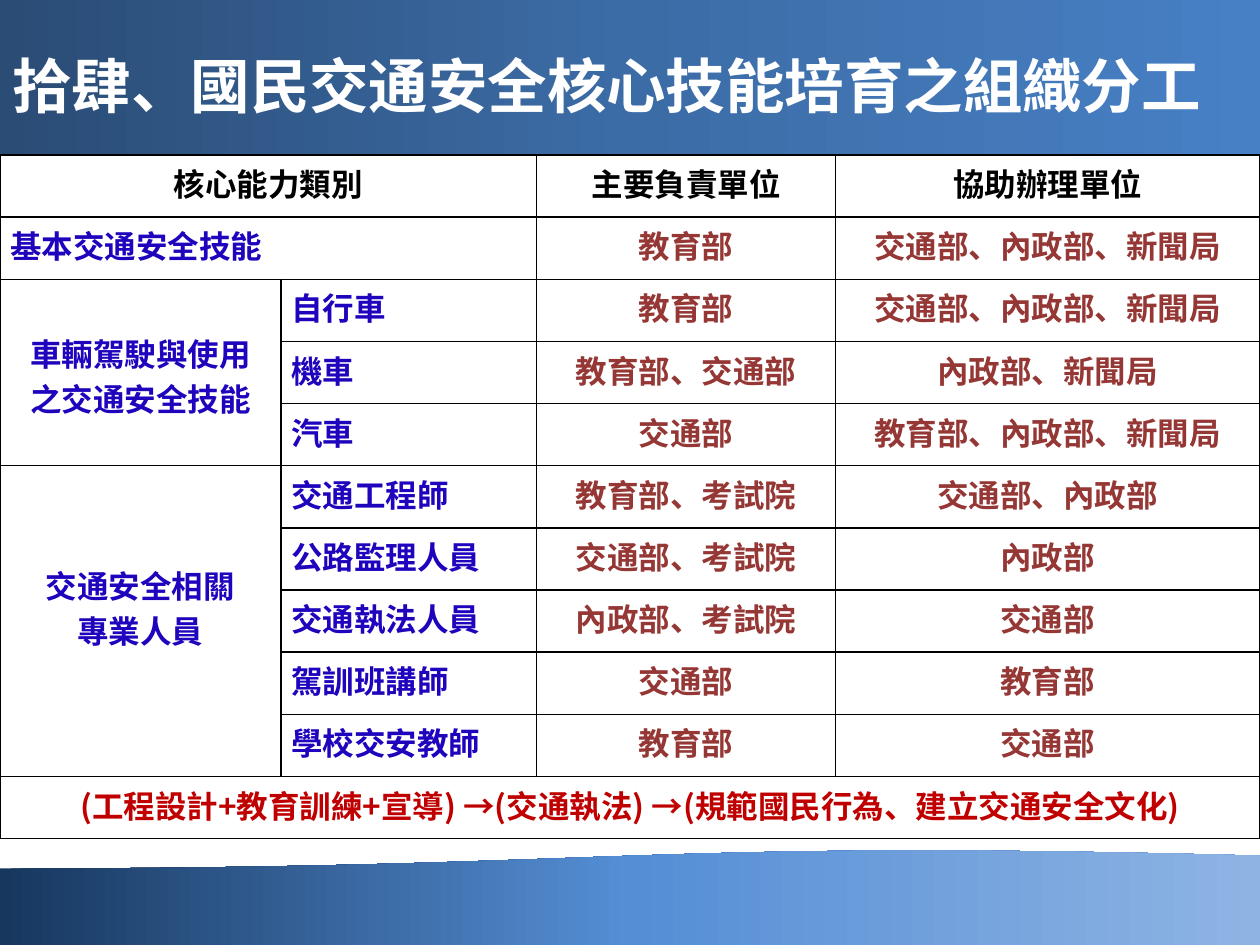
from dataclasses import dataclass

from lxml import etree
from pptx import Presentation
from pptx.dml.color import RGBColor
from pptx.enum.shapes import MSO_SHAPE
from pptx.enum.text import MSO_ANCHOR, PP_ALIGN
from pptx.oxml.ns import qn
from pptx.util import Inches, Pt

RECT, WAVE = MSO_SHAPE.RECTANGLE, MSO_SHAPE.FLOWCHART_DOCUMENT
LEFT, MID = PP_ALIGN.LEFT, PP_ALIGN.CENTER
CENTER = MSO_ANCHOR.MIDDLE


@dataclass(frozen=True)
class Theme:
    """Colours, font and type sizes of the slide."""
    font: str = "Noto Sans CJK SC"
    title: int = 34
    body: int = 18
    white: str = "FFFFFF"
    black: str = "000000"
    blue: str = "1E04BC"
    brown: str = "953735"
    red: str = "C00000"
    head: tuple = ("2A4C75", "3C6CA6", "4780C5")
    foot: tuple = ("17375E", "558ED5", "8EB4E3")


THEME = Theme()
COLS = (2.23, 2.03, 2.37, 3.37)
LINE = 0.36
TITLE = "拾肆、國民交通安全核心技能培育之組織分工"
HEADS = ("核心能力類別", "主要負責單位", "協助辦理單位")
BASIC = ("基本交通安全技能", "教育部", "交通部、內政部、新聞局")
GROUPS = (
    (("車輛駕駛與使用", "之交通安全技能"), 1, (
        ("自行車", "教育部", "交通部、內政部、新聞局"),
        ("機車", "教育部、交通部", "內政部、新聞局"),
        ("汽車", "交通部", "教育部、內政部、新聞局"))),
    (("交通安全相關", "專業人員"), 2, (
        ("交通工程師", "教育部、考試院", "交通部、內政部"),
        ("公路監理人員", "交通部、考試院", "內政部"),
        ("交通執法人員", "內政部、考試院", "交通部"),
        ("駕訓班講師", "交通部", "教育部"),
        ("學校交安教師", "教育部", "交通部"))),
)
FLOW = "(工程設計+教育訓練+宣導) →(交通執法) →(規範國民行為、建立交通安全文化)"
ROWS = 3 + sum(len(group[2]) for group in GROUPS)


def write(frame, lines, size, color, align):
    """Fill a text frame with one bold paragraph per line."""
    for i, line in enumerate(lines):
        para = frame.paragraphs[0] if i == 0 else frame.add_paragraph()
        para.alignment = align
        run = para.add_run()
        run.text = line
        font = run.font
        font.name, font.size, font.bold = THEME.font, Pt(size), True
        font.color.rgb = RGBColor.from_string(color)
        east = etree.SubElement(run._r.get_or_add_rPr(), qn("a:ea"))
        east.set("typeface", THEME.font)


def band(slide, box, kind, tones, turn=0):
    """Draw a band with a three-tone gradient across the box."""
    shape = slide.shapes.add_shape(kind, *map(Inches, box))
    shape.shadow.inherit = False
    shape.line.fill.background()
    shape.rotation = turn
    shape.fill.gradient()
    shape.fill.gradient_angle = turn
    stops = shape._element.spPr.find(".//" + qn("a:gsLst"))
    for stop in list(stops):
        stops.remove(stop)
    for i, tone in enumerate(tones):
        stop = etree.SubElement(stops, qn("a:gs"), pos=str(i * 50000))
        etree.SubElement(stop, qn("a:srgbClr"), val=tone)


def title(slide, box):
    """Place the title text in the box."""
    frame = slide.shapes.add_textbox(*map(Inches, box)).text_frame
    frame.word_wrap = True
    frame.vertical_anchor = CENTER
    write(frame, [TITLE], THEME.title, THEME.white, LEFT)


def style(cell):
    """Give a cell its insets, black borders and white fill."""
    cell.margin_left = cell.margin_right = Inches(0.08)
    cell.margin_top = cell.margin_bottom = Inches(0.04)
    props = cell._tc.get_or_add_tcPr()
    for side in ("lnL", "lnR", "lnT", "lnB"):
        line = etree.SubElement(props, qn("a:" + side), w=str(Pt(1)))
        fill = etree.SubElement(line, qn("a:solidFill"))
        etree.SubElement(fill, qn("a:srgbClr"), val=THEME.black)
    cell.fill.solid()
    cell.fill.fore_color.rgb = RGBColor.from_string(THEME.white)


def duties(slide, box):
    """Build the table of skills and the units in charge."""
    table = slide.shapes.add_table(ROWS, len(COLS), *map(Inches, box)).table
    table.first_row = table.horz_banding = False
    for col, width in zip(table.columns, COLS):
        col.width = Inches(width)
    for row in table.rows:
        row.height = Inches(box[3] / ROWS)
    for cell in table.iter_cells():
        style(cell)

    def put(row, col, lines, color, align=MID):
        """Write lines into one cell."""
        frame = table.cell(row, col).text_frame
        write(frame, lines, THEME.body, color, align)

    def units(row, names, color):
        """Write the two unit columns of a row."""
        for col, name in enumerate(names, 2):
            put(row, col, [name], color)

    def join(row, col, last, end):
        """Merge a block of cells."""
        table.cell(row, col).merge(table.cell(last, end))

    join(0, 0, 0, 1)
    put(0, 0, HEADS[:1], THEME.black)
    units(0, HEADS[1:], THEME.black)
    join(1, 0, 1, 1)
    put(1, 0, BASIC[:1], THEME.blue, LEFT)
    units(1, BASIC[1:], THEME.brown)
    row = 2
    for name, drop, items in GROUPS:
        join(row, 0, row + len(items) - 1, 0)
        table.cell(row, 0).margin_top = Inches(0.04 + drop * LINE)
        put(row, 0, name, THEME.blue)
        for item in items:
            put(row, 1, item[:1], THEME.blue, LEFT)
            units(row, item[1:], THEME.brown)
            row += 1
    join(row, 0, row, len(COLS) - 1)
    put(row, 0, [FLOW], THEME.red)


def main():
    """Build and save the slide."""
    deck = Presentation()
    deck.slide_width, deck.slide_height = Inches(10), Inches(7.5)
    slide = deck.slides.add_slide(deck.slide_layouts[6])
    band(slide, (0, 6.74, 10, 0.77), WAVE, THEME.foot, 180)
    band(slide, (0, 0, 10, 1.23), RECT, THEME.head)
    duties(slide, (0, 1.23, 10, 5.43))
    title(slide, (0, 0.21, 10, 0.93))
    deck.save("out.pptx")


if __name__ == "__main__":
    main()
